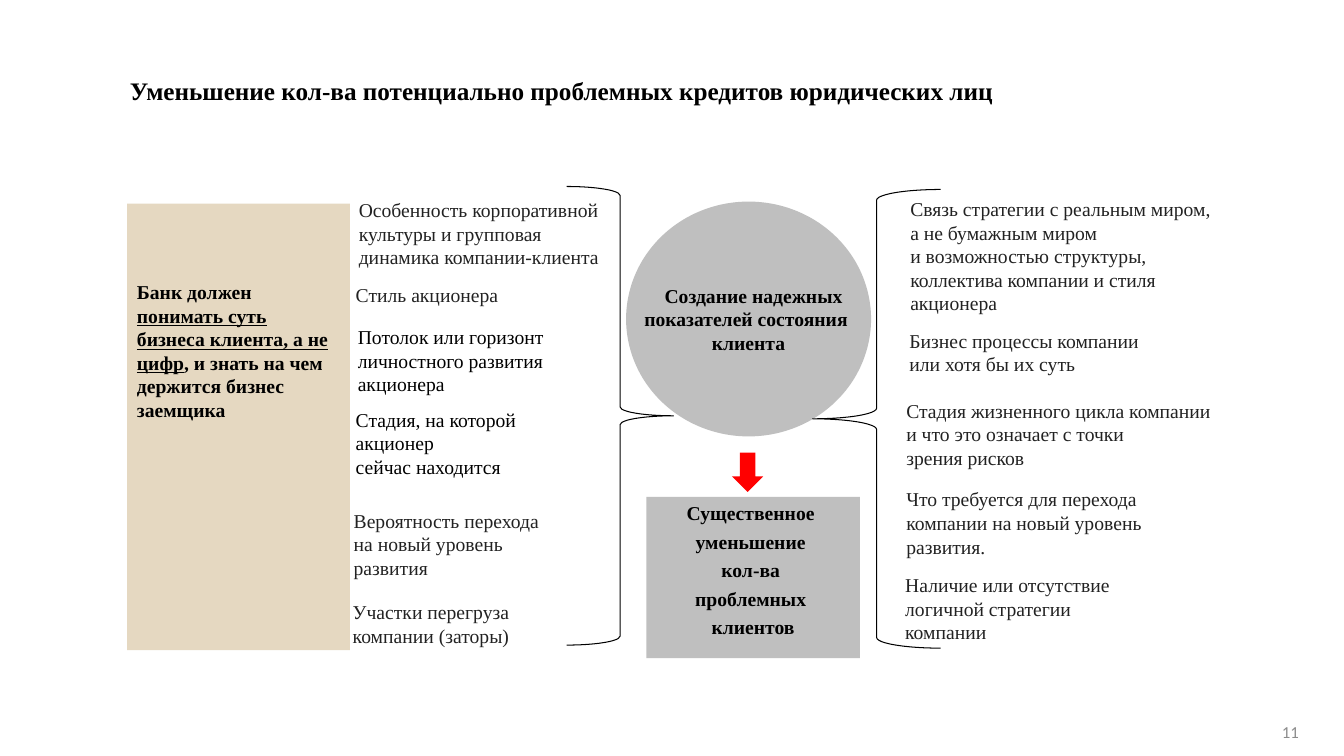
from dataclasses import dataclass, field

from pptx import Presentation
from pptx import util as u
from pptx.dml.color import RGBColor
from pptx.enum import shapes, text

COLORS = {
    "black": "000000",
    "graphite": "222222",
    "sand": "E5D8C1",
    "gray": "BFBFBF",
    "red": "FF0000",
    "number": "8C8C8C",
}
SERIF = "Times New Roman"
BODY = {"name": SERIF, "size": u.Pt(14)}
BOLD = {**BODY, "bold": True}
TITLE = {**BOLD, "size": u.Pt(18)}
NUMBER = {"name": "Calibri", "size": u.Pt(12)}
TOP = {"word_wrap": True, "vertical_anchor": text.MSO_ANCHOR.TOP}
MIDDLE = {**TOP, "vertical_anchor": text.MSO_ANCHOR.MIDDLE}
BOTTOM = {**TOP, "vertical_anchor": text.MSO_ANCHOR.BOTTOM}
UNWRAPPED = {**MIDDLE, "word_wrap": False}
LEFT = {"alignment": text.PP_ALIGN.LEFT}
CENTER = {"alignment": text.PP_ALIGN.CENTER}
RIGHT = {"alignment": text.PP_ALIGN.RIGHT}
KIND = shapes.MSO_SHAPE


@dataclass
class Block:
    """Text lines and their place; '_' inside a line toggles underlining."""
    left: float
    top: float
    width: float
    height: float
    lines: list[str] = field(default_factory=list)
    color: str = "graphite"
    font: dict = field(default_factory=lambda: BODY)
    frame: dict = field(default_factory=lambda: MIDDLE)
    paragraph: dict = field(default_factory=lambda: LEFT)
    kind: KIND | None = None
    fill: str | None = None
    line: str | None = None


def rgb(name: str) -> RGBColor:
    return RGBColor.from_string(COLORS[name])


def apply(target, values: dict) -> None:
    for name, value in values.items():
        setattr(target, name, value)


def write(frame, block: Block) -> None:
    apply(frame, block.frame)
    for index, line in enumerate(block.lines):
        paragraph = frame.paragraphs[0] if index == 0 else frame.add_paragraph()
        apply(paragraph, block.paragraph)
        for part, words in enumerate(line.split("_")):
            if words:
                run = paragraph.add_run()
                run.text = words
                apply(run.font, block.font)
                run.font.color.rgb = rgb(block.color)
                if part % 2:
                    run.font.underline = True


def draw(slide, block: Block):
    place = [u.Inches(v) for v in (block.left, block.top, block.width, block.height)]
    if block.kind is None:
        drawn = slide.shapes.add_textbox(*place)
    else:
        drawn = slide.shapes.add_shape(block.kind, *place)
        drawn.shadow.inherit = False
        if block.fill:
            drawn.fill.solid()
            drawn.fill.fore_color.rgb = rgb(block.fill)
        else:
            drawn.fill.background()
        if block.line:
            drawn.line.color.rgb = rgb(block.line)
            drawn.line.width = u.Pt(0.75)
        else:
            drawn.line.fill.background()
    if block.lines:
        write(drawn.text_frame, block)
    return drawn


HEADING = Block(1.19, 0.7, 10.42, 0.4,
                ["Уменьшение кол-ва потенциально проблемных кредитов юридических лиц"],
                "black", TITLE, BOTTOM)

BANK_DUTY = Block(1.26, 2.02, 2.21, 4.43, [
    "Банк должен",
    "_понимать суть_",
    "_бизнеса клиента, а не_",
    "_цифр_, и знать на чем",
    "держится бизнес",
    "заемщика",
], "black", BOLD, {**TOP, "margin_top": u.Inches(0.76)}, LEFT, KIND.RECTANGLE, "sand")

INDICATORS = Block(6.21, 2, 2.43, 2.33,
                   ["Создание надежных ", "показателей состояния ", "клиента"],
                   "black", BOLD, UNWRAPPED, CENTER, KIND.OVAL, "gray")

RESULT = Block(6.41, 4.93, 2.12, 1.6,
               ["Существенное ", "уменьшение ", "кол-ва ", "проблемных ", "клиентов"],
               "black", BOLD, {**UNWRAPPED, "margin_bottom": u.Inches(0.2)},
               {**CENTER, "space_before": u.Pt(3.5)}, KIND.RECTANGLE, "gray")

ARROW = Block(7.26, 4.49, 0.31, 0.39, kind=KIND.DOWN_ARROW, fill="red")

OWNER_FACTORS = [
    Block(3.46, 1.91, 2.65, 0.81,
          ["Особенность корпоративной", "культуры и групповая", "динамика компании-клиента"]),
    Block(3.43, 2.75, 1.7, 0.34, ["Стиль акционера"]),
    Block(3.45, 3.17, 2.11, 0.81,
          ["Потолок или горизонт", "личностного развития", "акционера"], "black"),
    Block(3.43, 3.99, 2.13, 0.81,
          ["Стадия, на которой акционер", "сейчас находится"], "black"),
    Block(3.41, 4.99, 2.16, 0.81,
          ["Вероятность перехода", "на новый уровень", "развития"]),
    Block(3.4, 5.9, 1.82, 0.57, ["Участки перегруза", "компании (заторы)"]),
]

COMPANY_FACTORS = [
    Block(8.93, 1.9, 3.26, 1.28,
          ["Связь стратегии с реальным миром,", "а не бумажным миром",
           "и возможностью структуры,", "коллектива компании и стиля", "акционера"]),
    Block(8.92, 3.21, 2.62, 0.57, ["Бизнес процессы компании", "или хотя бы их суть"]),
    Block(8.89, 3.9, 3.29, 0.81,
          ["Стадия жизненного цикла компании", "и что это означает с точки",
           "зрения рисков"]),
    Block(8.89, 4.78, 2.65, 0.81,
          ["Что требуется для перехода", "компании на новый уровень", "развития."]),
    Block(8.88, 5.63, 2.37, 0.81,
          ["Наличие или отсутствие", "логичной стратегии", "компании"]),
]

BRACES = [
    Block(5.62, 1.85, 1.06, 4.55, kind=KIND.RIGHT_BRACE, line="black"),
    Block(8.06, 1.88, 1.27, 4.55, kind=KIND.LEFT_BRACE, line="black"),
]

PAGE_NUMBER = Block(9.98, 7.06, 3, 0.4, ["11"], "number", NUMBER, MIDDLE, RIGHT)


def main() -> None:
    deck = Presentation()
    apply(deck, {"slide_width": u.Inches(13.33), "slide_height": u.Inches(7.5)})
    slide = deck.slides.add_slide(deck.slide_layouts[6])

    # Heading and the bank's duty
    draw(slide, HEADING)
    draw(slide, BANK_DUTY)

    # Centre: indicators lead to the result
    indicators = draw(slide, INDICATORS)
    opening = indicators.text_frame.paragraphs[0]
    opening._p.get_or_add_pPr().set("marL", str(u.Inches(0.15)))
    draw(slide, RESULT)
    draw(slide, ARROW)

    # Factors on both sides, braces and page number
    for block in [*OWNER_FACTORS, *COMPANY_FACTORS, *BRACES, PAGE_NUMBER]:
        draw(slide, block)

    deck.save("out.pptx")


if __name__ == "__main__":
    main()
